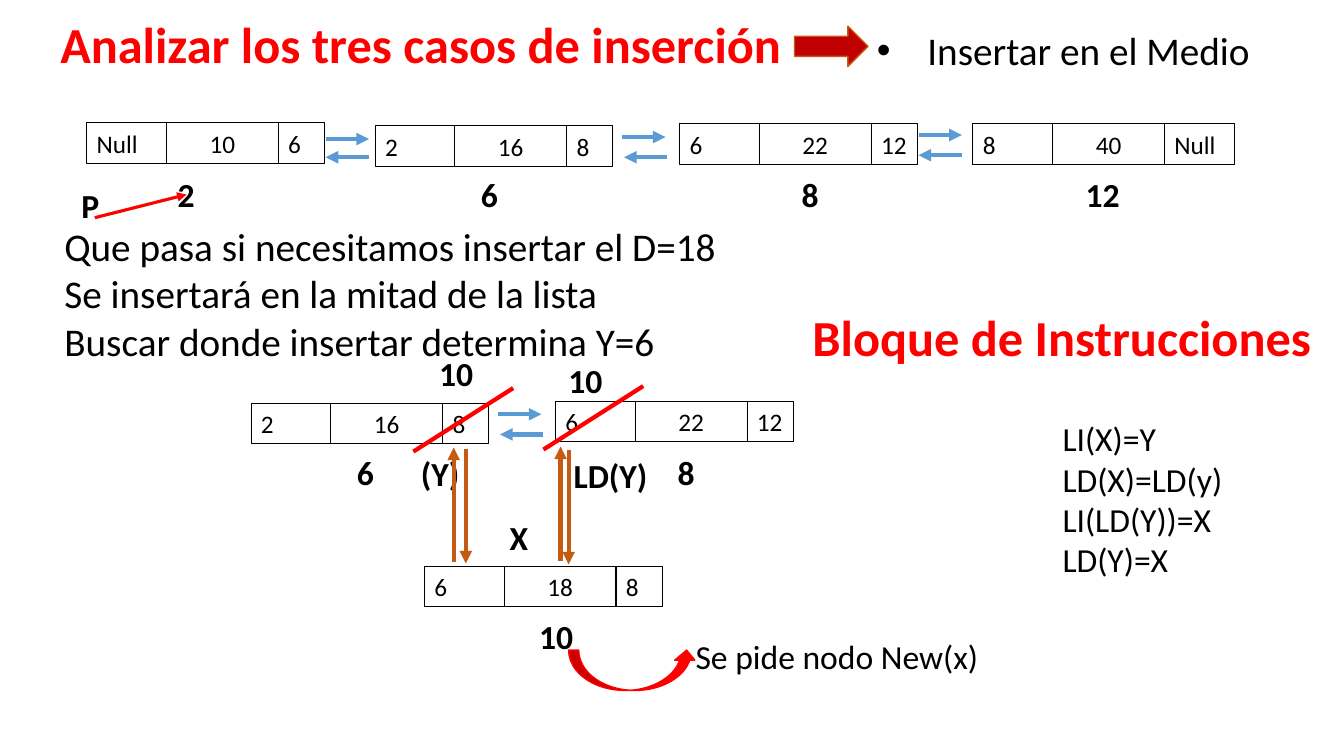
from lxml.etree import SubElement
from pptx import Presentation
from pptx.dml.color import RGBColor
from pptx.enum.shapes import MSO_CONNECTOR, MSO_SHAPE
from pptx.enum.text import MSO_ANCHOR, MSO_AUTO_SIZE, PP_ALIGN
from pptx.oxml.ns import qn
from pptx.util import Pt

PX = 9144
FONT = "Calibri"
BLACK = RGBColor(0x00, 0x00, 0x00)
WHITE = RGBColor(0xFF, 0xFF, 0xFF)
RED = RGBColor(0xFF, 0x00, 0x00)
DARK_RED = RGBColor(0xC0, 0x00, 0x00)
BLUE = RGBColor(0x5B, 0x9B, 0xD5)
BROWN = RGBColor(0xC5, 0x5A, 0x11)

LEFT_WIDTH, DATA_WIDTH, RIGHT_WIDTH, CELL_HEIGHT = 79, 111, 46, 40
LABEL_WIDTH, LABEL_HEIGHT = 71, 50


def px(*lengths):
    """Turn pixel lengths into EMU."""
    return [length * PX for length in lengths]


def write(shape, lines, size, color=BLACK, bold=False, align=PP_ALIGN.LEFT):
    """Fill a shape with evenly formatted lines of text."""
    frame = shape.text_frame
    frame.text = "\n".join(lines)
    frame.word_wrap = True
    frame.auto_size = MSO_AUTO_SIZE.SHAPE_TO_FIT_TEXT
    for paragraph in frame.paragraphs:
        paragraph.alignment = align
        for run in paragraph.runs:
            run.font.name = FONT
            run.font.size = Pt(size)
            run.font.bold = bold
            run.font.color.rgb = color


def add_text(slide, box, lines, size, **style):
    """Add a text box and return it."""
    shape = slide.shapes.add_textbox(*px(*box))
    write(shape, lines, size, **style)
    return shape


def add_label(slide, left, top, text, width=LABEL_WIDTH):
    """Add a bold centred label."""
    add_text(slide, (left, top, width, LABEL_HEIGHT), [text], 24,
             bold=True, align=PP_ALIGN.CENTER)


def add_bullet(shape):
    """Give the first paragraph a round bullet with a hanging indent."""
    properties = shape.text_frame.paragraphs[0]._p.get_or_add_pPr()
    properties.set("marL", str(50 * PX))
    properties.set("indent", str(-50 * PX))
    SubElement(properties, qn("a:buFont"), typeface="Arial")
    SubElement(properties, qn("a:buChar"), char="•")


def add_figure(slide, kind, box, fill, line, line_width):
    """Add an outlined preset shape, unfilled when fill is None."""
    shape = slide.shapes.add_shape(kind, *px(*box))
    shape.shadow.inherit = False
    if fill is None:
        shape.fill.background()
    else:
        shape.fill.solid()
        shape.fill.fore_color.rgb = fill
    shape.line.color.rgb = line
    shape.line.width = Pt(line_width)
    return shape


def add_node(slide, left, top, values, right_width=RIGHT_WIDTH, right_fill=None):
    """Draw a list node: left link, datum and right link."""
    widths = (LEFT_WIDTH, DATA_WIDTH, right_width)
    aligns = (PP_ALIGN.LEFT, PP_ALIGN.CENTER, PP_ALIGN.LEFT)
    fills = (None, None, right_fill)
    for value, width, align, fill in zip(values, widths, aligns, fills):
        cell = add_figure(slide, MSO_SHAPE.RECTANGLE,
                          (left, top, width, CELL_HEIGHT), fill, BLACK, 0.75)
        cell.text_frame.vertical_anchor = MSO_ANCHOR.MIDDLE
        write(cell, [value], 18, align=align)
        left += width


def add_line(slide, start, end, color, width=3, arrow=True):
    """Draw a straight line, with an arrowhead at its end if wanted."""
    line = slide.shapes.add_connector(MSO_CONNECTOR.STRAIGHT, *px(*start, *end))
    line.line.color.rgb = color
    line.line.width = Pt(width)
    if arrow:
        SubElement(line.line._get_or_add_ln(), qn("a:tailEnd"), type="triangle")
    SubElement(line._element.spPr, qn("a:effectLst"))


def add_double_link(slide, left, top, back_left, back_top):
    """Draw the forward and backward arrows between two nodes."""
    length = 43
    add_line(slide, (left, top), (left + length, top), BLUE)
    add_line(slide, (back_left + length, back_top), (back_left, back_top), BLUE)


def add_initial_list(slide):
    """Draw the doubly linked list before the insertion."""
    add_node(slide, 86, 122, ("Null", "10", "6"))
    add_node(slide, 372, 125, ("2", "16", "8"))
    add_node(slide, 674, 123, ("6", "22", "12"))
    add_node(slide, 965, 123, ("8", "40", "Null"), right_width=69)
    add_double_link(slide, 323, 138, 323, 156)
    add_double_link(slide, 617, 136, 619, 156)
    add_double_link(slide, 911, 134, 911, 154)
    for left, address in ((149, "2"), (450, "6"), (768, "8"), (1058, "12")):
        add_label(slide, left, 168, address)
    add_label(slide, 54, 179, "P")
    add_line(slide, (94, 216), (185, 193), RED, 2.25)


def add_insertion(slide):
    """Draw the new node being linked between its neighbours."""
    add_node(slide, 249, 400, ("2", "16", "8"), right_fill=WHITE)
    add_node(slide, 551, 398, ("6", "22", "12"))
    add_node(slide, 421, 562, ("6", "18", "8"))
    add_double_link(slide, 494, 411, 496, 431)
    for left, top, text in ((327, 443, "6"), (645, 443, "8"), (516, 606, "10"),
                            (401, 444, "(Y)"), (479, 508, "X"),
                            (545, 352, "10"), (417, 345, "10")):
        add_label(slide, left, top, text)
    add_label(slide, 556, 446, "LD(Y)", width=99)
    for x, start, end in ((462, 445, 559), (556, 557, 443),
                          (450, 558, 444), (564, 446, 560)):
        add_line(slide, (x, start), (x, end), BROWN)
    for left, bottom in ((539, 446), (410, 448)):
        add_line(slide, (left, bottom), (left + 99, bottom - 63), RED, arrow=False)


def main():
    """Build the slide and save it."""
    presentation = Presentation()
    presentation.slide_width, presentation.slide_height = px(1333, 750)
    slide = presentation.slides.add_slide(presentation.slide_layouts[6])

    add_text(slide, (50, 8, 746, 71), ["Analizar los tres casos de inserción"],
             36, color=RED, bold=True)
    add_figure(slide, MSO_SHAPE.RIGHT_ARROW, (788, 26, 73, 40), DARK_RED, BROWN, 1)
    add_bullet(add_text(slide, (860, 21, 440, 57), ["Insertar en el Medio"], 28))
    add_text(slide, (54, 216, 1224, 151),
             ["Que pasa si necesitamos insertar el D=18",
              "Se insertará en la mitad de la lista",
              "Buscar donde insertar determina Y=6"], 28)
    add_initial_list(slide)
    add_text(slide, (796, 299, 532, 71), ["Bloque de Instrucciones"],
             36, color=RED, bold=True)
    add_text(slide, (1044, 410, 200, 172),
             ["LI(X)=Y", "LD(X)=LD(y)", "LI(LD(Y))=X", "LD(Y)=X"], 24)
    add_insertion(slide)
    add_figure(slide, MSO_SHAPE.CURVED_UP_ARROW, (564, 645, 127, 40), RED, RED, 1)
    add_text(slide, (680, 626, 368, 50), ["Se pide nodo New(x)"], 24)
    presentation.save("out.pptx")


if __name__ == "__main__":
    main()
